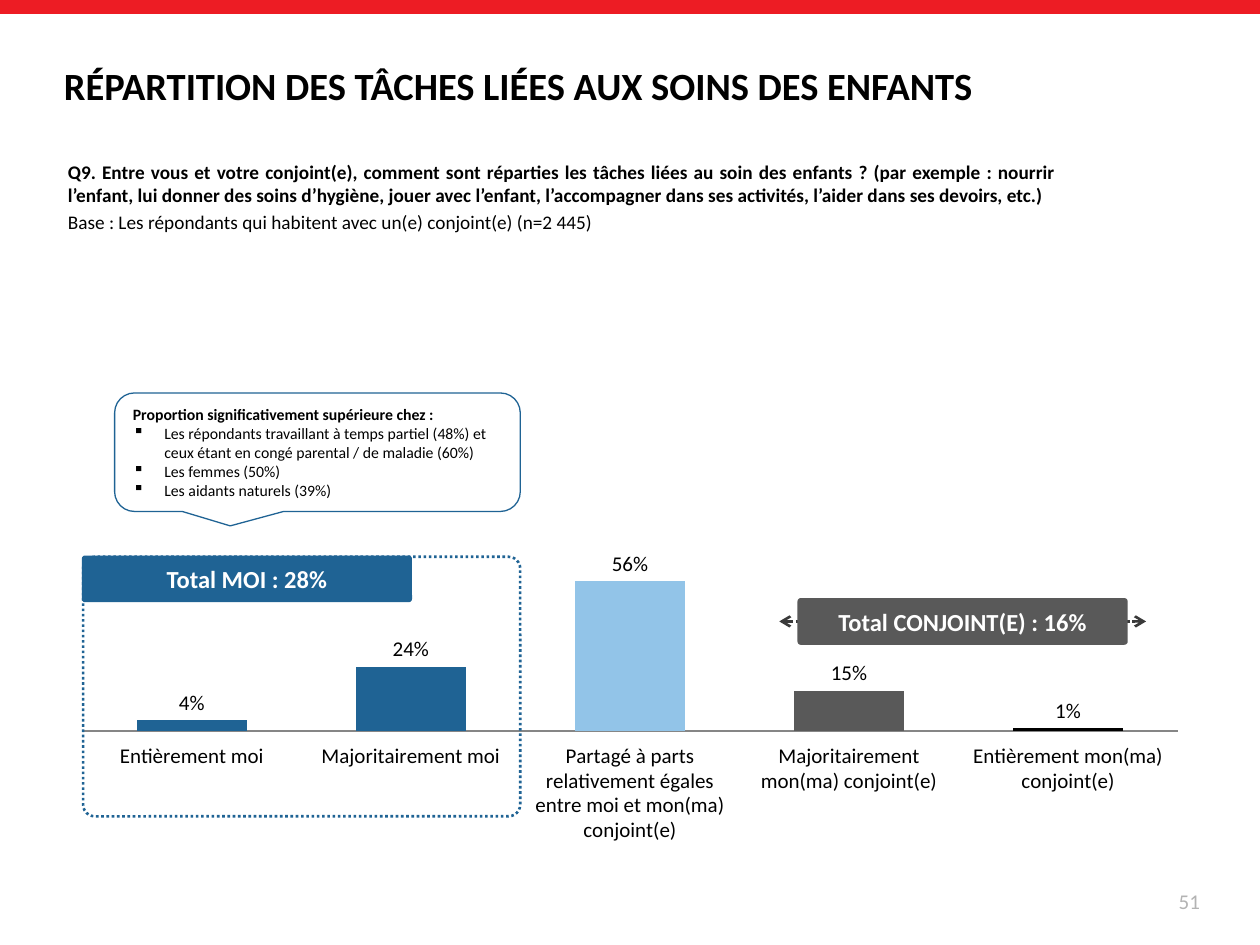
from lxml import etree
from pptx import Presentation
from pptx.chart.data import CategoryChartData
from pptx.dml.color import RGBColor
from pptx.enum.chart import XL_CHART_TYPE, XL_LABEL_POSITION, XL_TICK_LABEL_POSITION, XL_TICK_MARK
from pptx.enum.dml import MSO_LINE
from pptx.enum.shapes import MSO_CONNECTOR, MSO_SHAPE
from pptx.enum.text import MSO_ANCHOR, PP_ALIGN
from pptx.oxml import parse_xml
from pptx.oxml.ns import nsdecls, qn
from pptx.util import Pt

COLUMNS = XL_CHART_TYPE.COLUMN_CLUSTERED
OUTSIDE = XL_LABEL_POSITION.OUTSIDE_END
NO_TICK = XL_TICK_MARK.NONE
LOW = XL_TICK_LABEL_POSITION.LOW
DOTTED = MSO_LINE.ROUND_DOT
STRAIGHT = MSO_CONNECTOR.STRAIGHT
RECT, ROUNDED = MSO_SHAPE.RECTANGLE, MSO_SHAPE.ROUNDED_RECTANGLE
CALLOUT = MSO_SHAPE.ROUNDED_RECTANGULAR_CALLOUT
TOP, MIDDLE = MSO_ANCHOR.TOP, MSO_ANCHOR.MIDDLE
LEFT, CENTER, RIGHT, JUSTIFY = PP_ALIGN.LEFT, PP_ALIGN.CENTER, PP_ALIGN.RIGHT, PP_ALIGN.JUSTIFY

FONT = "Calibri"
COLORS = {
    "red": "ED1C24", "blue": "1F6394", "sky": "92C4E8", "gray": "595959",
    "black": "000000", "white": "FFFFFF", "arrow": "3A3A3A",
    "axis": "868686", "number": "B3B3B3",
}

TITLE = "RÉPARTITION DES TÂCHES LIÉES AUX SOINS DES ENFANTS"
QUESTION = (
    "Q9. Entre vous et votre conjoint(e), comment sont réparties les tâches liées au soin "
    "des enfants ? (par exemple : nourrir l’enfant, lui donner des soins d’hygiène, jouer "
    "avec l’enfant, l’accompagner dans ses activités, l’aider dans ses devoirs, etc.)"
)
BASE = "Base : Les répondants qui habitent avec un(e) conjoint(e) (n=2 445)"
PAGE_NUMBER = "51"
ANSWERS = [
    ("Entièrement moi", 0.04, "blue"),
    ("Majoritairement moi", 0.24, "blue"),
    ("Partagé à parts relativement égales entre moi et mon(ma) conjoint(e)", 0.56, "sky"),
    ("Majoritairement mon(ma) conjoint(e)", 0.15, "gray"),
    ("Entièrement mon(ma) conjoint(e)", 0.01, "black"),
]
TOTAL_ME = "Total MOI : 28%"
TOTAL_PARTNER = "Total CONJOINT(E) : 16%"
HIGHER_HEADING = "Proportion significativement supérieure chez :"
HIGHER_GROUPS = [
    "Les répondants travaillant à temps partiel (48%) et ceux étant en congé parental / de maladie (60%)",
    "Les femmes (50%)",
    "Les aidants naturels (39%)",
]
PLOT_LAYOUT = {"x": 0.017, "y": 0.371, "w": 0.966, "h": 0.425}
TOTAL_W, TOTAL_H = 187.2, 25.2
ME_LEFT, ME_TOP = 47.5, 318.2
PARTNER_LEFT, PARTNER_TOP = 456.5, 342.5
ARROW_OVERHANG = 11.2


def rgb(name):
    return RGBColor.from_string(COLORS[name])


def style_font(font, size, color="black", bold=False):
    font.name, font.size, font.bold = FONT, Pt(size), bold
    font.color.rgb = rgb(color)


def add_bullet(paragraph):
    properties = paragraph._p.get_or_add_pPr()
    properties.set("marL", str(Pt(18)))
    properties.set("indent", str(-Pt(18)))
    etree.SubElement(properties, qn("a:buChar")).set("char", "▪")


def write(frame, lines, size, color="black", align=LEFT, anchor=MIDDLE, gap=0):
    frame.word_wrap = True
    frame.vertical_anchor = anchor
    for index, (text, bold, bullet) in enumerate(lines):
        paragraph = frame.paragraphs[0] if index == 0 else frame.add_paragraph()
        paragraph.text = text
        paragraph.alignment = align
        if index and gap:
            paragraph.space_before = Pt(gap)
        if bullet:
            add_bullet(paragraph)
        style_font(paragraph.font, size, color, bold)


def add_text(slide, box, lines, size, **options):
    textbox = slide.shapes.add_textbox(*map(Pt, box))
    write(textbox.text_frame, lines, size, **options)


def add_shape(slide, kind, box, fill=None, line=None, width=1.5, adjustments=()):
    shape = slide.shapes.add_shape(kind, *map(Pt, box))
    shape.shadow.inherit = False
    for index, value in enumerate(adjustments):
        shape.adjustments[index] = value
    if fill:
        shape.fill.solid()
        shape.fill.fore_color.rgb = rgb(fill)
    else:
        shape.fill.background()
    if line:
        shape.line.color.rgb = rgb(line)
        shape.line.width = Pt(width)
    else:
        shape.line.fill.background()
    return shape


def add_total(slide, left, top, text, color):
    total = add_shape(slide, ROUNDED, (left, top, TOTAL_W, TOTAL_H), color, color, adjustments=[0.045])
    write(total.text_frame, [(text, True, False)], 14, "white", CENTER)


def add_double_arrow(slide, start, end, y):
    arrow = slide.shapes.add_connector(STRAIGHT, Pt(start), Pt(y), Pt(end), Pt(y))
    arrow.line.color.rgb = rgb("arrow")
    arrow.line.width = Pt(1.5)
    arrow.line.dash_style = DOTTED
    line = arrow.line._get_or_add_ln()
    for end_tag in ("a:headEnd", "a:tailEnd"):
        etree.SubElement(line, qn(end_tag)).set("type", "arrow")
    etree.SubElement(arrow._element.spPr, qn("a:effectLst"))


def add_answer_chart(slide):
    data = CategoryChartData(number_format="0%")
    data.categories = [label for label, _, _ in ANSWERS]
    data.add_series("Series 1", [share for _, share, _ in ANSWERS])
    chart = slide.shapes.add_chart(COLUMNS, Pt(36), Pt(131.8), Pt(648), Pt(359.3), data).chart
    chart.has_legend = chart.has_title = False
    style_font(chart.font, 12)

    shares = chart.value_axis
    shares.minimum_scale, shares.maximum_scale = 0, 1
    shares.has_major_gridlines = shares.visible = False
    answers = chart.category_axis
    answers.major_tick_mark = answers.minor_tick_mark = NO_TICK
    answers.tick_label_position = LOW
    answers.format.line.color.rgb = rgb("axis")

    plot = chart.plots[0]
    plot.gap_width = 100
    plot.vary_by_categories = False
    plot.has_data_labels = True
    labels = plot.data_labels
    labels.show_value = True
    labels.position = OUTSIDE
    labels.number_format, labels.number_format_is_linked = "0%", False
    style_font(labels.font, 12)
    for index, (_, _, color) in enumerate(ANSWERS):
        fill = plot.series[0].points[index].format.fill
        fill.solid()
        fill.fore_color.rgb = rgb(color)

    plot_area = chart._chartSpace.chart.plotArea
    for layout in plot_area.findall(qn("c:layout")):
        plot_area.remove(layout)
    sizes = "".join(f'<c:{side} val="{value}"/>' for side, value in PLOT_LAYOUT.items())
    plot_area.insert(0, parse_xml(
        f'<c:layout {nsdecls("c")}><c:manualLayout><c:layoutTarget val="inner"/>'
        f'<c:xMode val="edge"/><c:yMode val="edge"/>{sizes}</c:manualLayout></c:layout>'))


def main():
    deck = Presentation()
    deck.slide_width, deck.slide_height = Pt(720), Pt(540)
    slide = deck.slides.add_slide(deck.slide_layouts[6])

    add_shape(slide, RECT, (0, 0, 720, 8), "red")
    add_text(slide, (525, 500.4, 167.8, 28.8), [(PAGE_NUMBER, False, False)], 12, color="number", align=RIGHT)
    add_text(slide, (31.7, 87.8, 578.9, 85), [(QUESTION, True, False), (BASE, False, False)], 11,
             align=JUSTIFY, anchor=TOP, gap=2.2)
    add_text(slide, (29.5, 30.2, 551.5, 37.4), [(TITLE, True, False)], 22)
    add_answer_chart(slide)

    me_frame = add_shape(slide, ROUNDED, (ME_LEFT, ME_TOP, 249.8, 148.3), line="blue", adjustments=[0.045])
    me_frame.line.dash_style = DOTTED
    add_total(slide, ME_LEFT, ME_TOP, TOTAL_ME, "blue")
    add_double_arrow(slide, PARTNER_LEFT - ARROW_OVERHANG, PARTNER_LEFT + TOTAL_W + ARROW_OVERHANG,
                     PARTNER_TOP + TOTAL_H / 2)
    add_total(slide, PARTNER_LEFT, PARTNER_TOP, TOTAL_PARTNER, "gray")

    higher = add_shape(slide, CALLOUT, (65.5, 224.6, 231.8, 67.7), "white", "blue", 0.75, [-0.215, 0.622, 0.167])
    write(higher.text_frame,
          [(HIGHER_HEADING, True, False)] + [(group, False, True) for group in HIGHER_GROUPS], 9)

    deck.save("out.pptx")


if __name__ == "__main__":
    main()
